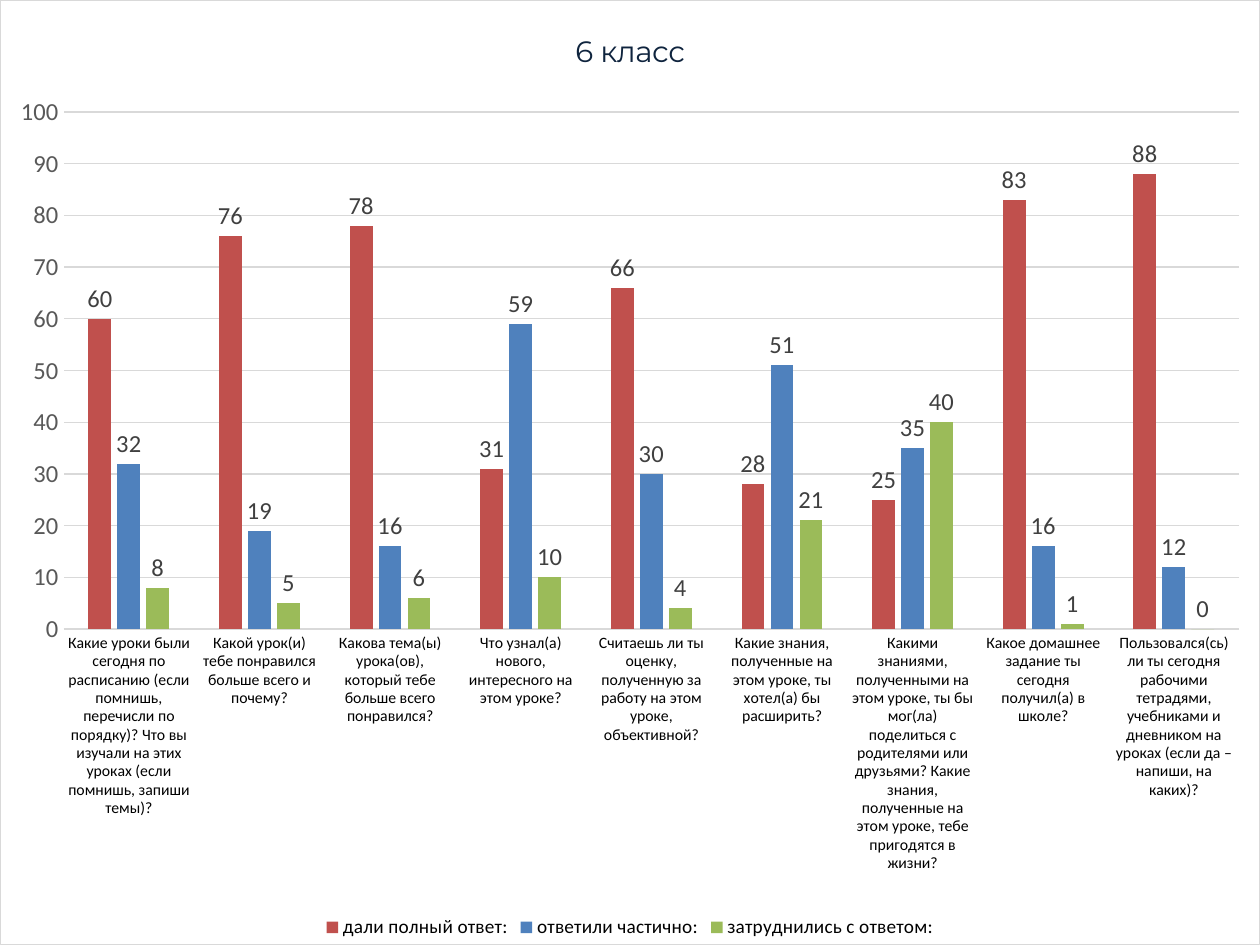
from pptx import Presentation
from pptx.chart.data import CategoryChartData
from pptx.dml.color import RGBColor
from pptx.enum.chart import XL_CHART_TYPE, XL_LABEL_POSITION, XL_LEGEND_POSITION, XL_TICK_MARK
from pptx.oxml import parse_xml
from pptx.oxml.ns import nsdecls, qn
from pptx.util import Inches, Pt

CLUSTERED = XL_CHART_TYPE.COLUMN_CLUSTERED
OUTSIDE_END = XL_LABEL_POSITION.OUTSIDE_END
BOTTOM = XL_LEGEND_POSITION.BOTTOM
NO_TICK = XL_TICK_MARK.NONE

BLACK = RGBColor(0x00, 0x00, 0x00)
WHITE = RGBColor(0xFF, 0xFF, 0xFF)
NAVY = RGBColor(0x0F, 0x24, 0x3E)
DARK_GREY = RGBColor(0x40, 0x40, 0x40)
GREY = RGBColor(0x59, 0x59, 0x59)
LIGHT_GREY = RGBColor(0xD9, 0xD9, 0xD9)
RED = RGBColor(0xC0, 0x50, 0x4D)
BLUE = RGBColor(0x4F, 0x81, 0xBD)
GREEN = RGBColor(0x9B, 0xBB, 0x59)

TITLE = "6 класс"
QUESTIONS = [
    "Какие уроки были сегодня по расписанию (если помнишь, перечисли по порядку)? "
    "Что вы изучали на этих уроках (если помнишь, запиши темы)?",
    "Какой урок(и) тебе понравился больше всего и почему?",
    "Какова тема(ы) урока(ов), который тебе больше всего понравился?",
    "Что узнал(а) нового, интересного на этом уроке?",
    "Считаешь ли ты оценку, полученную за работу на этом уроке, объективной?",
    "Какие знания, полученные на этом уроке, ты хотел(а) бы расширить?",
    "Какими знаниями, полученными на этом уроке, ты бы мог(ла) поделиться с родителями "
    "или друзьями? Какие знания, полученные на этом уроке, тебе пригодятся в жизни?",
    "Какое домашнее задание ты сегодня получил(а) в школе?",
    "Пользовался(сь) ли ты сегодня рабочими тетрадями, учебниками и дневником на уроках "
    "(если да – напиши, на каких)?",
]
ANSWERS = [
    ("дали полный ответ:", (60, 76, 78, 31, 66, 28, 25, 83, 88), RED),
    ("ответили частично:", (32, 19, 16, 59, 30, 51, 35, 16, 12), BLUE),
    ("затруднились с ответом:", (8, 5, 6, 10, 4, 21, 40, 1, 0), GREEN),
]


class ChartSlide:
    """Holds the style and the current slide; lengths are shares of the slide's size."""

    text_font = "Calibri"
    title_font = "Montserrat"
    line_width = Pt(0.75)

    def __init__(self, presentation):
        self.width = presentation.slide_width
        self.height = presentation.slide_height
        self.slide = presentation.slides.add_slide(presentation.slide_layouts[6])

    def style_font(self, font, size, color, name=text_font):
        font.name, font.size, font.bold = name, Pt(size), False
        font.color.rgb = color

    def style_line(self, line):
        line.color.rgb = LIGHT_GREY
        line.width = self.line_width

    def add_column_chart(self, left, top, width, height, categories, answers):
        data = CategoryChartData()
        data.categories = categories
        for name, values, _ in answers:
            data.add_series(name, values)
        frame = self.slide.shapes.add_chart(
            CLUSTERED, int(left * self.width), int(top * self.height),
            int(width * self.width), int(height * self.height), data)
        chart = frame.chart
        self.style_font(chart.font, 14, BLACK)

        plot = chart.plots[0]
        plot.gap_width, plot.overlap, plot.vary_by_categories = 219, -27, False
        for series, (_, _, color) in zip(plot.series, answers):
            series.format.fill.solid()
            series.format.fill.fore_color.rgb = color
            labels = series.data_labels
            labels.show_value = True
            labels.position = OUTSIDE_END
            self.style_font(labels.font, 14, DARK_GREY)
        return chart

    def add_title(self, chart, text):
        chart.has_title = True
        chart.chart_title.include_in_layout = False
        run = chart.chart_title.text_frame.paragraphs[0].add_run()
        run.text = text
        self.style_font(run.font, 16.8, NAVY, self.title_font)

    def add_legend(self, chart):
        chart.has_legend = True
        chart.legend.position = BOTTOM
        chart.legend.include_in_layout = False
        self.style_font(chart.legend.font, 11, BLACK)

    def format_axes(self, chart):
        category_axis, value_axis = chart.category_axis, chart.value_axis
        for axis, size, color in ((category_axis, 9, BLACK), (value_axis, 14, GREY)):
            axis.major_tick_mark = axis.minor_tick_mark = NO_TICK
            self.style_font(axis.tick_labels.font, size, color)
        self.style_line(category_axis.format.line)
        value_axis.minimum_scale, value_axis.maximum_scale = 0, 100
        value_axis.major_unit = 10
        value_axis.format.line.fill.background()
        value_axis.has_major_gridlines = True
        self.style_line(value_axis.major_gridlines.format.line)

    def place_plot(self, chart, left, top, width, height):
        plot_area = chart.element.find(".//" + qn("c:plotArea"))
        for layout in plot_area.findall(qn("c:layout")):
            plot_area.remove(layout)
        sizes = "".join(f'<c:{tag} val="{share}"/>' for tag, share in
                        (("x", left), ("y", top), ("w", width), ("h", height)))
        plot_area.insert(0, parse_xml(
            f'<c:layout {nsdecls("c")}><c:manualLayout><c:layoutTarget val="inner"/>'
            f'<c:xMode val="edge"/><c:yMode val="edge"/>{sizes}</c:manualLayout></c:layout>'))

    def frame_chart(self, chart):
        chart_part = chart.element.find(qn("c:chart"))
        chart_part.addnext(parse_xml(
            f'<c:spPr {nsdecls("c", "a")}><a:solidFill><a:srgbClr val="{WHITE}"/></a:solidFill>'
            f'<a:ln w="{self.line_width}"><a:solidFill><a:srgbClr val="{LIGHT_GREY}"/>'
            '</a:solidFill></a:ln></c:spPr>'))


def main():
    presentation = Presentation()
    presentation.slide_width, presentation.slide_height = Inches(10), Inches(7.5)
    page = ChartSlide(presentation)

    # Chart over the whole slide
    chart = page.add_column_chart(0, 0, 1, 1, QUESTIONS, ANSWERS)
    page.frame_chart(chart)
    page.place_plot(chart, 0.05, 0.118, 0.934, 0.548)

    # Title, axes and legend
    page.add_title(chart, TITLE)
    page.format_axes(chart)
    page.add_legend(chart)

    presentation.save("out.pptx")


if __name__ == "__main__":
    main()
